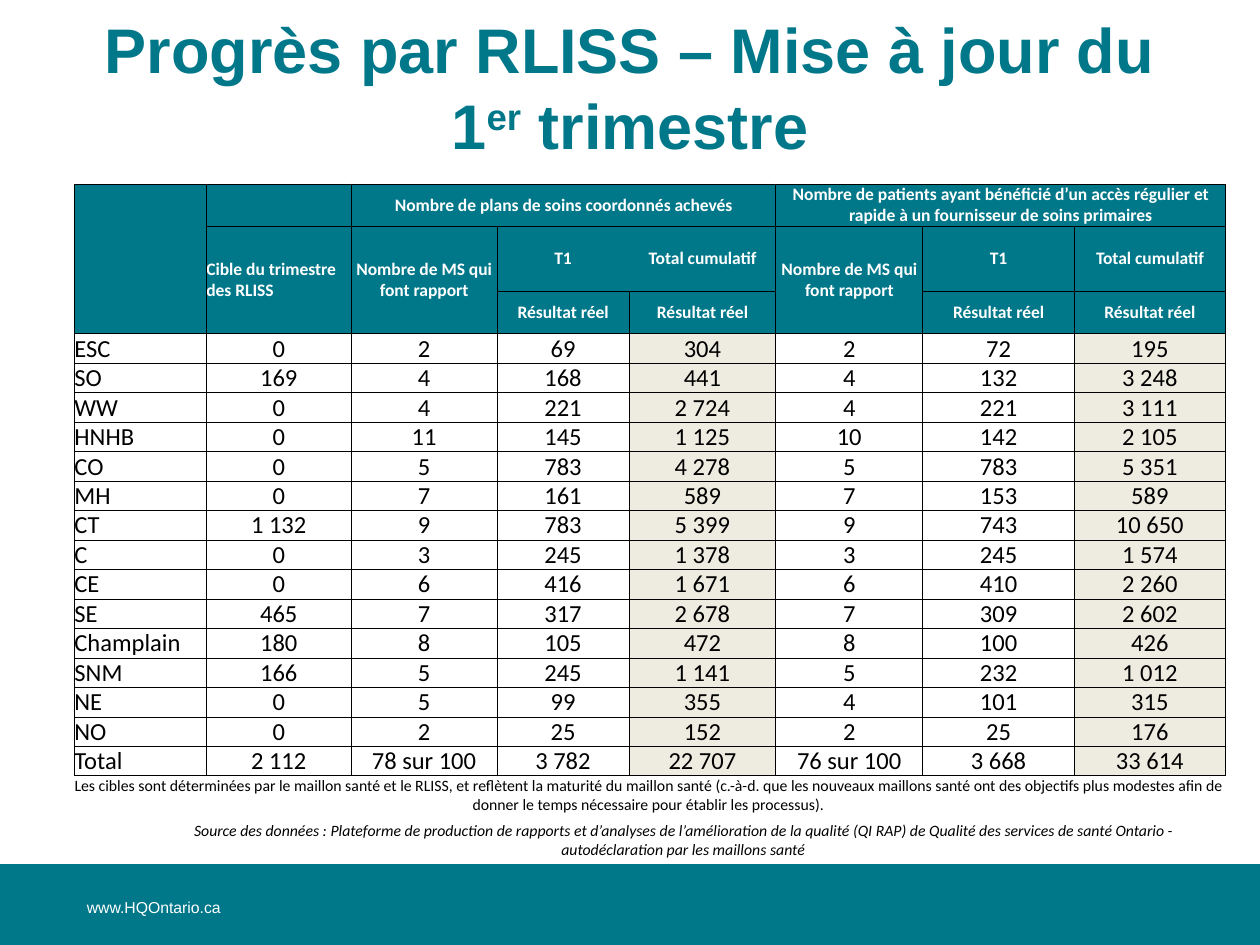
from dataclasses import dataclass
from typing import Optional

from lxml import etree
from pptx import Presentation
from pptx import util as u
from pptx.dml.color import RGBColor
from pptx.enum import shapes, text
from pptx.oxml import ns

TEAL, BEIGE, BLACK, WHITE = "00788A", "EEECE1", "000000", "FFFFFF"
CENTER, LEFT = text.PP_ALIGN.CENTER, text.PP_ALIGN.LEFT
MIDDLE, TOP = text.MSO_ANCHOR.MIDDLE, text.MSO_ANCHOR.TOP


@dataclass
class Box:
    left: float
    top: float
    width: float
    height: float

    def emu(self) -> list:
        return [u.Cm(v) for v in (self.left, self.top, self.width, self.height)]


@dataclass
class Header:
    row: int
    col: int
    label: str = ""
    rows: int = 1
    cols: int = 1
    align: text.PP_ALIGN = CENTER


COLUMNS = [2.66, 2.92, 2.94, 2.66, 2.96, 2.96, 3.06, 3.04]
HEADER_ROWS = [0.86, 1.3, 0.86]
BODY_ROW = 0.59
TOTAL_COLUMNS = (4, 7)

HEADERS = [
    Header(0, 0, rows=3),
    Header(0, 1),
    Header(0, 2, "Nombre de plans de soins coordonnés achevés", cols=3),
    Header(0, 5, "Nombre de patients ayant bénéficié d’un accès régulier et "
                 "rapide à un fournisseur de soins primaires", cols=3),
    Header(1, 1, "Cible du trimestre des RLISS", rows=2, align=LEFT),
]
for first in (2, 5):
    HEADERS += [
        Header(1, first, "Nombre de MS qui font rapport", rows=2),
        Header(1, first + 1, "T1"),
        Header(1, first + 2, "Total cumulatif"),
        Header(2, first + 1, "Résultat réel"),
        Header(2, first + 2, "Résultat réel"),
    ]

RESULTS = """\
ESC|0|2|69|304|2|72|195
SO|169|4|168|441|4|132|3 248
WW|0|4|221|2 724|4|221|3 111
HNHB|0|11|145|1 125|10|142|2 105
CO|0|5|783|4 278|5|783|5 351
MH|0|7|161|589|7|153|589
CT|1 132|9|783|5 399|9|743|10 650
C|0|3|245|1 378|3|245|1 574
CE|0|6|416|1 671|6|410|2 260
SE|465|7|317|2 678|7|309|2 602
Champlain|180|8|105|472|8|100|426
SNM|166|5|245|1 141|5|232|1 012
NE|0|5|99|355|4|101|315
NO|0|2|25|152|2|25|176
Total|2 112|78 sur 100|3 782|22 707|76 sur 100|3 668|33 614"""


def rgb(value: str) -> RGBColor:
    return RGBColor.from_string(value)


def add_run(p, content: str, *, size: float, color: str = BLACK, font: str = "Calibri",
            bold: bool = False, italic: bool = False, baseline: int = 0) -> None:
    r = p.add_run()
    r.text = content
    r.font.name, r.font.size = font, u.Pt(size)
    r.font.bold, r.font.italic = bold, italic
    r.font.color.rgb = rgb(color)
    if baseline:
        r.font._element.set("baseline", str(baseline * 1000))


def add_text(s, box: Box, align=CENTER, anchor=MIDDLE):
    """Add an empty wrapping text box and return its paragraph."""
    tf = s.shapes.add_textbox(*box.emu()).text_frame
    tf.word_wrap = True
    tf.vertical_anchor = anchor
    p = tf.paragraphs[0]
    p.alignment = align
    return p


def set_borders(cell, hidden: str = "") -> None:
    tc_pr = cell._tc.get_or_add_tcPr()
    for side in "LRTB":
        ln = etree.SubElement(tc_pr, ns.qn(f"a:ln{side}"), w=str(u.Pt(0.5)))
        if side == hidden:
            etree.SubElement(ln, ns.qn("a:noFill"))
        else:
            fill = etree.SubElement(ln, ns.qn("a:solidFill"))
            etree.SubElement(fill, ns.qn("a:srgbClr"), val=BLACK)


def fill_cell(cell, label: str, *, fill: Optional[str], align=CENTER, **font) -> None:
    cell.margin_left = cell.margin_right = cell.margin_top = cell.margin_bottom = 0
    cell.vertical_anchor = MIDDLE
    if fill:
        cell.fill.solid()
        cell.fill.fore_color.rgb = rgb(fill)
    else:
        cell.fill.background()
    p = cell.text_frame.paragraphs[0]
    p.alignment = align
    if label:
        add_run(p, label, **font)


def add_results_table(s) -> None:
    results = [line.split("|") for line in RESULTS.splitlines()]
    heights = HEADER_ROWS + [BODY_ROW] * len(results)
    box = Box(1.5, 3.71, sum(COLUMNS), sum(heights))
    table = s.shapes.add_table(len(heights), len(COLUMNS), *box.emu()).table
    table.first_row = table.horz_banding = False
    for column, width in zip(table.columns, COLUMNS):
        column.width = u.Cm(width)
    for row, height in zip(table.rows, heights):
        row.height = u.Cm(height)

    # No line stands between the first T1 and Total cumulatif
    hidden = {(1, 3): "R", (1, 4): "L"}
    for i in range(len(heights)):
        for j in range(len(COLUMNS)):
            set_borders(table.cell(i, j), hidden.get((i, j), ""))

    for h in HEADERS:
        cell = table.cell(h.row, h.col)
        if h.rows > 1 or h.cols > 1:
            cell.merge(table.cell(h.row + h.rows - 1, h.col + h.cols - 1))
        fill_cell(cell, h.label, fill=TEAL, align=h.align, size=10, color=WHITE, bold=True)

    for i, values in enumerate(results, len(HEADER_ROWS)):
        for j, value in enumerate(values):
            fill_cell(table.cell(i, j), value, fill=BEIGE if j in TOTAL_COLUMNS else None,
                      align=CENTER if j else LEFT, size=14)


def main() -> None:
    prs = Presentation()
    prs.slide_width, prs.slide_height = u.Cm(25.4), u.Cm(19.05)
    s = prs.slides.add_slide(prs.slide_layouts[6])

    # Footer band
    sp = s.shapes.add_shape(shapes.MSO_SHAPE.RECTANGLE, *Box(0, 17.42, 25.5, 1.7).emu())
    sp.shadow.inherit = False
    sp.fill.solid()
    sp.fill.fore_color.rgb = rgb(TEAL)
    sp.line.fill.background()

    # Title
    p = add_text(s, Box(1.27, 0.76, 22.86, 1.96))
    for part, baseline in (("Progrès par RLISS – Mise à jour du 1", 0), ("er", 30),
                           (" trimestre", 0)):
        add_run(p, part, size=36, color=TEAL, font="Arial", bold=True, baseline=baseline)

    # Web address
    p = add_text(s, Box(1.5, 17.98, 7.82, 0.69), align=LEFT, anchor=TOP)
    add_run(p, "www.HQOntario.ca", size=9, color=WHITE, font="Arial")

    # Notes under the table
    p = add_text(s, Box(1.14, 15.52, 23.85, 1.02))
    add_run(p, "Les cibles sont déterminées par le maillon santé et le RLISS, et reflètent la "
               "maturité du maillon santé (c.-à-d. que les nouveaux maillons santé ont des "
               "objectifs plus modestes afin de donner le temps nécessaire pour établir les "
               "processus).", size=9)
    p = add_text(s, Box(3, 16.41, 21.54, 1.02))
    add_run(p, "Source des données : Plateforme de production de rapports et d’analyses de "
               "l’amélioration de la qualité (QI RAP) de Qualité des services de santé Ontario - "
               "autodéclaration par les maillons santé", size=9, italic=True)

    add_results_table(s)
    prs.save("out.pptx")


if __name__ == "__main__":
    main()
